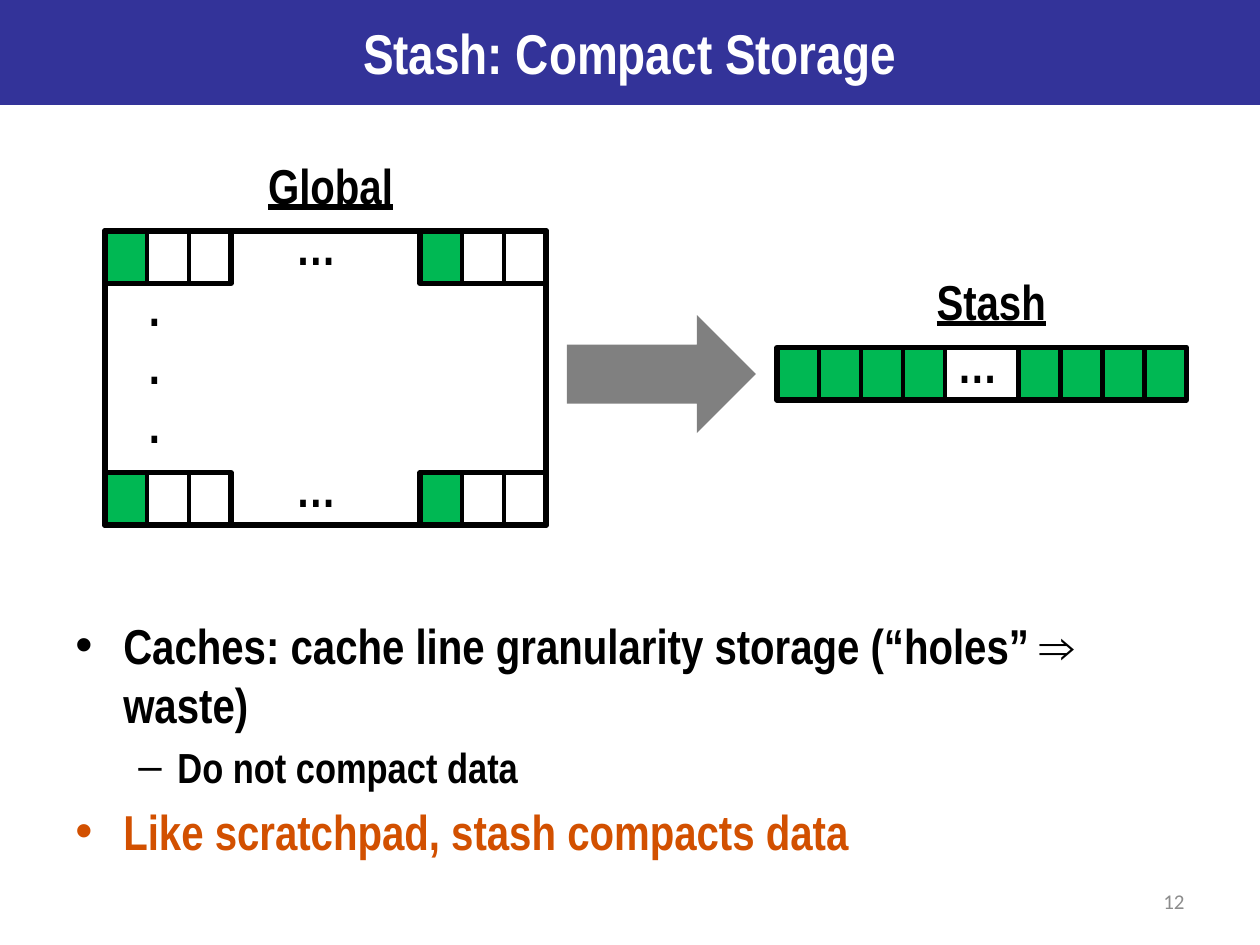
from lxml.etree import SubElement as Sub
from pptx import Presentation
from pptx.dml.color import RGBColor
from pptx.enum.shapes import MSO_CONNECTOR as Link, MSO_SHAPE as Shape
from pptx.enum.text import MSO_ANCHOR as Anchor, PP_ALIGN as Align
from pptx.oxml.ns import qn
from pptx.util import Inches, Pt

HUES = {"band": "333399", "white": "FFFFFF", "ink": "000000", "used": "00B853",
        "arrow": "808080", "accent": "D25000", "page": "8C8C8C"}
COL, ROW = Inches(10) / 30, Inches(7.5) / 18  # one memory cell is one grid unit


def hue(name):
    return RGBColor.from_string(HUES[name])


def spot(x, y, w, h):
    """Turn a box in columns and rows into lengths."""
    return round(x * COL), round(y * ROW), round(w * COL), round(h * ROW)


def block(parent, box, fill=None, line=None, kind=Shape.RECTANGLE):
    part = parent.add_shape(kind, *spot(*box))
    part.shadow.inherit = False
    if fill:
        part.fill.solid()
        part.fill.fore_color.rgb = hue(fill)
    else:
        part.fill.background()
    if line:
        part.line.color.rgb = hue("ink")
        part.line.width = Pt(line)
    else:
        part.line.fill.background()
    return part


def style(para, size, color="ink", face="Arial Narrow", bold=True, under=None):
    for run in para.runs:
        font = run.font
        font.size, font.name, font.bold, font.underline = Pt(size), face, bold, under
        font.color.rgb = hue(color)


def label(parent, box, text, align=Align.LEFT, under=None):
    frame = parent.add_textbox(*spot(*box)).text_frame
    frame.word_wrap = True
    frame.text = text
    for para in frame.paragraphs:
        para.alignment = align
        style(para, 28, under=under)


def strip(parent, box, used, cuts):
    """Draw a row of cells: filled ones, the outline, then separators."""
    x, y, w, h = box
    for cell in used:
        block(parent, (x + cell, y, 1, h), "used")
    block(parent, box, line=3)
    for cut in cuts:
        left, top, _, tall = spot(x + cut, y, 0, h)
        rule = parent.add_connector(Link.STRAIGHT, left, top, left, top + tall)
        rule.line.color.rgb = hue("ink")
        rule.line.width = Pt(2.5)
        Sub(rule._element.spPr, qn("a:effectLst"))


def title(shapes, box):
    frame = block(shapes, box, "band").text_frame
    frame.vertical_anchor = Anchor.MIDDLE
    frame.text = "Stash: Compact Storage"
    para = frame.paragraphs[0]
    para.alignment = Align.CENTER
    style(para, 32, "white")


def store(shapes, box):
    """Draw global memory, with cache lines in its corners."""
    group = shapes.add_group_shape().shapes
    x, y, w, h = box
    block(group, box, line=3)
    for top in (y, y + h - 1):
        for left in (x, x + w - 3):
            strip(group, (left, top, 3, 1), [0], [1, 2])
        label(group, (x + 4.25, top - 0.39, 1.44, 1.37), "…")
    label(group, (x + 0.75, y + 0.76, 1.44, 3.62), ".\n.\n.")
    label(group, (x + 3.27, y - 1.56, 4.2, 1.37), "Global", Align.CENTER, True)


def stash(shapes, box):
    group = shapes.add_group_shape().shapes
    x, y, w, h = box
    near = range(4)
    far = [w - 4 + n for n in near]
    strip(group, box, [*near, *far], [1, 2, 3, 4, *far])
    label(group, (x + 4, y - 0.36, 1.44, 1.37), "…")
    label(group, (x + 3, y - 1.56, 4.2, 1.37), "Stash", Align.CENTER, True)


def points(shapes, box):
    frame = shapes.add_textbox(*spot(*box)).text_frame
    frame.word_wrap = True
    rows = [("Caches: cache line granularity storage (“holes” ⇒ waste)", 0, "ink"),
            ("Do not compact data", 1, "ink"),
            ("Like scratchpad, stash compacts data", 0, "accent")]
    looks = [(28, 0.38, 0.38, "•"), (24, 0.81, 0.31, "–")]
    frame.text = "\n".join(text for text, _, _ in rows)
    for para, (_, level, color) in zip(frame.paragraphs, rows):
        size, left, hang, mark = looks[level]
        para.level = level
        style(para, size, color)
        props = para._p.get_or_add_pPr()
        props.set("marL", str(Inches(left)))
        props.set("indent", str(-Inches(hang)))
        Sub(Sub(props, qn("a:spcBef")), qn("a:spcPct"), val="20000")
        Sub(props, qn("a:buFont"), typeface="Arial")
        Sub(props, qn("a:buChar"), char=mark)


def page(shapes, box):
    frame = shapes.add_textbox(*spot(*box)).text_frame
    frame.word_wrap = True
    frame.vertical_anchor = Anchor.MIDDLE
    frame.text = "12"
    para = frame.paragraphs[0]
    para.alignment = Align.RIGHT
    style(para, 12, "page", "Calibri", False)


def main():
    deck = Presentation()
    deck.slide_width, deck.slide_height = Inches(10), Inches(7.5)
    shapes = deck.slides.add_slide(deck.slide_layouts[6]).shapes
    title(shapes, (0, 0, 30, 2))
    points(shapes, (1.5, 11.6, 27.5, 4.2))
    page(shapes, (21.5, 16.68, 7, 0.96))
    block(shapes, (13.5, 6, 4.5, 2.25), "arrow", kind=Shape.RIGHT_ARROW)
    store(shapes, (2.5, 4.4, 10.5, 5.6))
    stash(shapes, (18.5, 6.62, 9.75, 1))
    deck.save("out.pptx")


if __name__ == "__main__":
    main()
